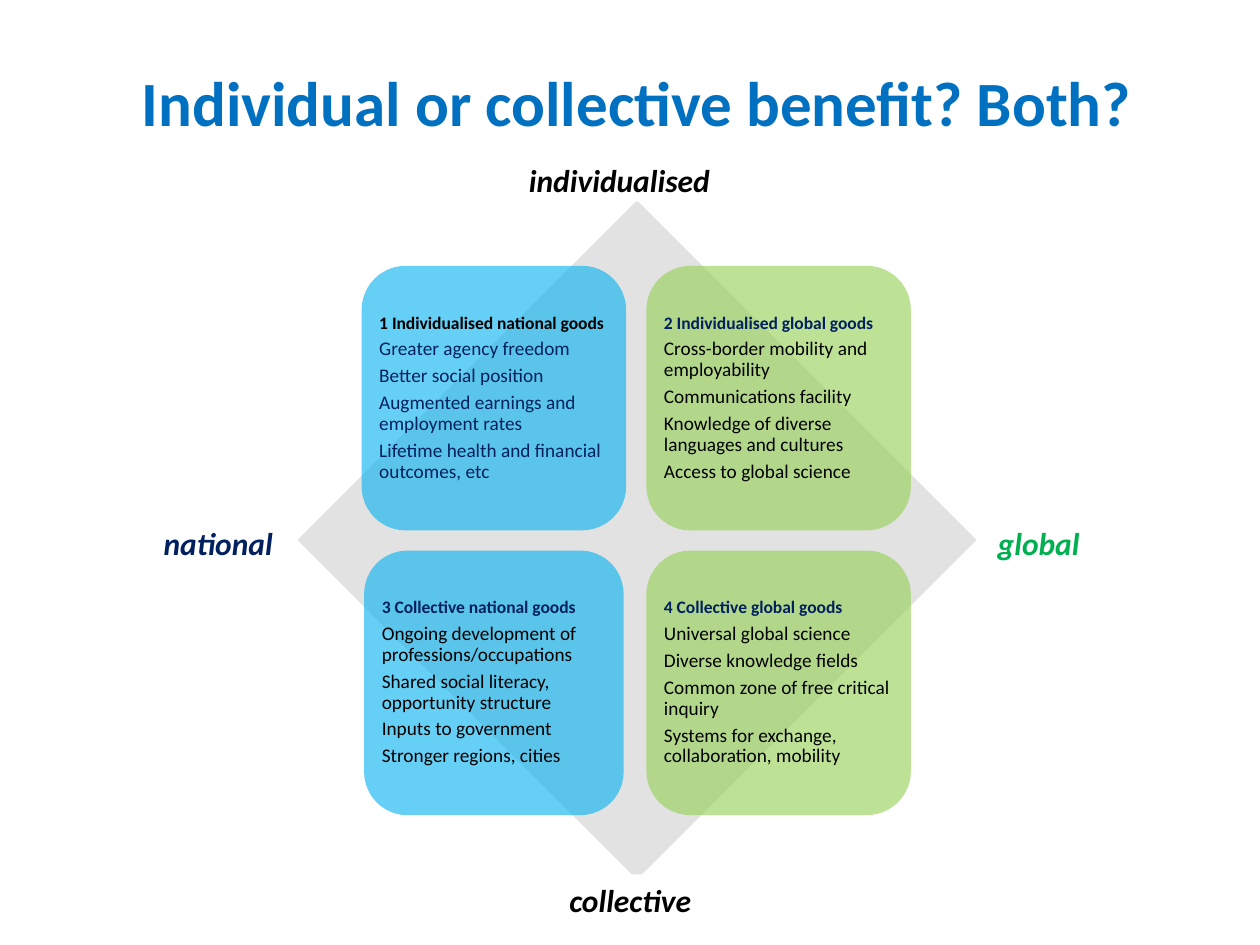
from lxml.etree import SubElement
from pptx import Presentation
from pptx.dml.color import RGBColor
from pptx.enum.shapes import MSO_SHAPE
from pptx.enum.text import MSO_ANCHOR, PP_ALIGN
from pptx.oxml.ns import qn
from pptx.util import Pt

PX = 9144  # 100 px to the inch
FONT = "Calibri"
BLACK, NAVY, WHITE = "000000", "002060", "FFFFFF"
SKY, LIME = "00B0F0", "92D050"
EDGE = 10  # from a card's edge to its text box

# box, fill, heading colour, list colour, heading, list
CARDS = [
    ((287, 211, 210, 210), SKY, BLACK, NAVY, "1 Individualised national goods",
     ["Greater agency freedom", "Better social position",
      "Augmented earnings and employment rates",
      "Lifetime health and financial outcomes, etc"]),
    ((513, 211, 210, 210), LIME, NAVY, BLACK, "2 Individualised global goods",
     ["Cross-border mobility and employability", "Communications facility",
      "Knowledge of diverse languages and cultures",
      "Access to global science"]),
    ((289, 437, 206, 210), SKY, NAVY, BLACK, "3 Collective national goods",
     ["Ongoing development of professions/occupations",
      "Shared social literacy, opportunity structure",
      "Inputs to government", "Stronger regions, cities"]),
    ((513, 437, 210, 210), LIME, NAVY, BLACK, "4 Collective global goods",
     ["Universal global science", "Diverse knowledge fields",
      "Common zone of free critical inquiry",
      "Systems for exchange, collaboration, mobility"]),
]

LABELS = [
    ("individualised", (410, 123, 190, 37), BLACK),
    ("collective", (442, 694, 126, 31), BLACK),
    ("national", (120, 411, 112, 33), NAVY),
    ("global", (782, 411, 94, 43), "00B050"),
]


def emu(box):
    return [n * PX for n in box]


def paint(obj, color):
    """Give a fill or a font a solid colour."""
    if hasattr(obj, "solid"):
        obj.solid()
        obj.fore_color.rgb = RGBColor.from_string(color)
    else:
        obj.color.rgb = RGBColor.from_string(color)


def add_run(para, text, size, color, bold=False, italic=False):
    run = para.add_run()
    run.text = text
    font = run.font
    font.name, font.size = FONT, Pt(size)
    font.bold, font.italic = bold, italic
    paint(font, color)


def add_shape(shapes, kind, box, color, alpha=100):
    """Add a preset shape without a line; alpha is its opacity in percent."""
    shape = shapes.add_shape(kind, *emu(box))
    shape.shadow.inherit = False
    shape.line.fill.background()
    paint(shape.fill, color)
    if alpha < 100:
        tint = shape.fill._xPr.find(".//" + qn("a:srgbClr"))
        SubElement(tint, qn("a:alpha"), val=str(alpha * 1000))
    return shape


def add_title(slide, text, box):
    title = slide.shapes.title
    title.left, title.top, title.width, title.height = emu(box)
    frame = title.text_frame
    frame.vertical_anchor = MSO_ANCHOR.MIDDLE
    para = frame.paragraphs[0]
    para.alignment, para.line_spacing = PP_ALIGN.CENTER, 0.9
    add_run(para, text, 36, "0070C0", bold=True)


def add_card(shapes, box, fill, head_color, list_color, head, items):
    add_shape(shapes, MSO_SHAPE.ROUNDED_RECTANGLE, box, fill, 60)
    x, y, w, h = box
    inner = (x + EDGE, y + EDGE, w - 2 * EDGE, h - 2 * EDGE)
    frame = shapes.add_textbox(*emu(inner)).text_frame
    frame.word_wrap = True
    frame.vertical_anchor = MSO_ANCHOR.MIDDLE
    frame.margin_left = frame.margin_right = 4 * PX
    frame.margin_top = frame.margin_bottom = 4 * PX
    for i, text in enumerate([head] + items):
        para = frame.add_paragraph() if i else frame.paragraphs[0]
        para.line_spacing, para.space_after = 0.9, Pt(3.5)
        if i:
            add_run(para, text, 11, list_color)
        else:
            add_run(para, text, 10, head_color, bold=True)


def add_label(shapes, text, box, color):
    frame = add_shape(shapes, MSO_SHAPE.RECTANGLE, box, WHITE).text_frame
    frame.word_wrap = True
    frame.vertical_anchor = MSO_ANCHOR.TOP
    para = frame.paragraphs[0]
    para.alignment = PP_ALIGN.LEFT
    add_run(para, text, 18, color, bold=True, italic=True)


def main():
    deck = Presentation()
    deck.slide_width, deck.slide_height = emu((1000, 750))
    slide = deck.slides.add_slide(deck.slide_layouts[5])
    add_title(slide, "Individual or collective benefit? Both?",
              (74, 23, 863, 123))
    matrix = slide.shapes.add_group_shape().shapes
    add_shape(matrix, MSO_SHAPE.DIAMOND, (236, 159, 539, 539), "D9D9D9", 75)
    for card in CARDS:
        add_card(matrix, *card)
    for label in LABELS:
        add_label(slide.shapes, *label)
    deck.save("out.pptx")


if __name__ == "__main__":
    main()
